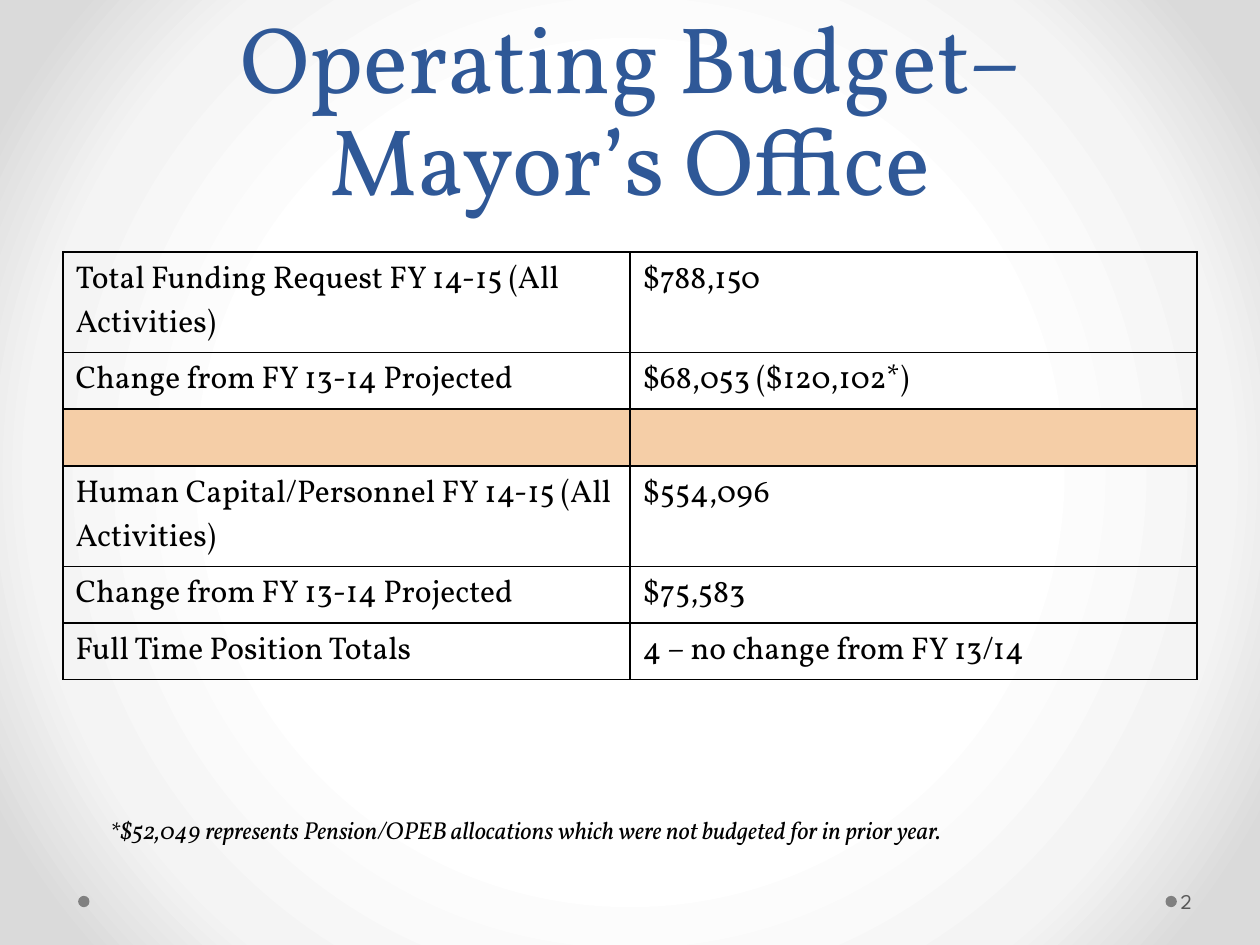
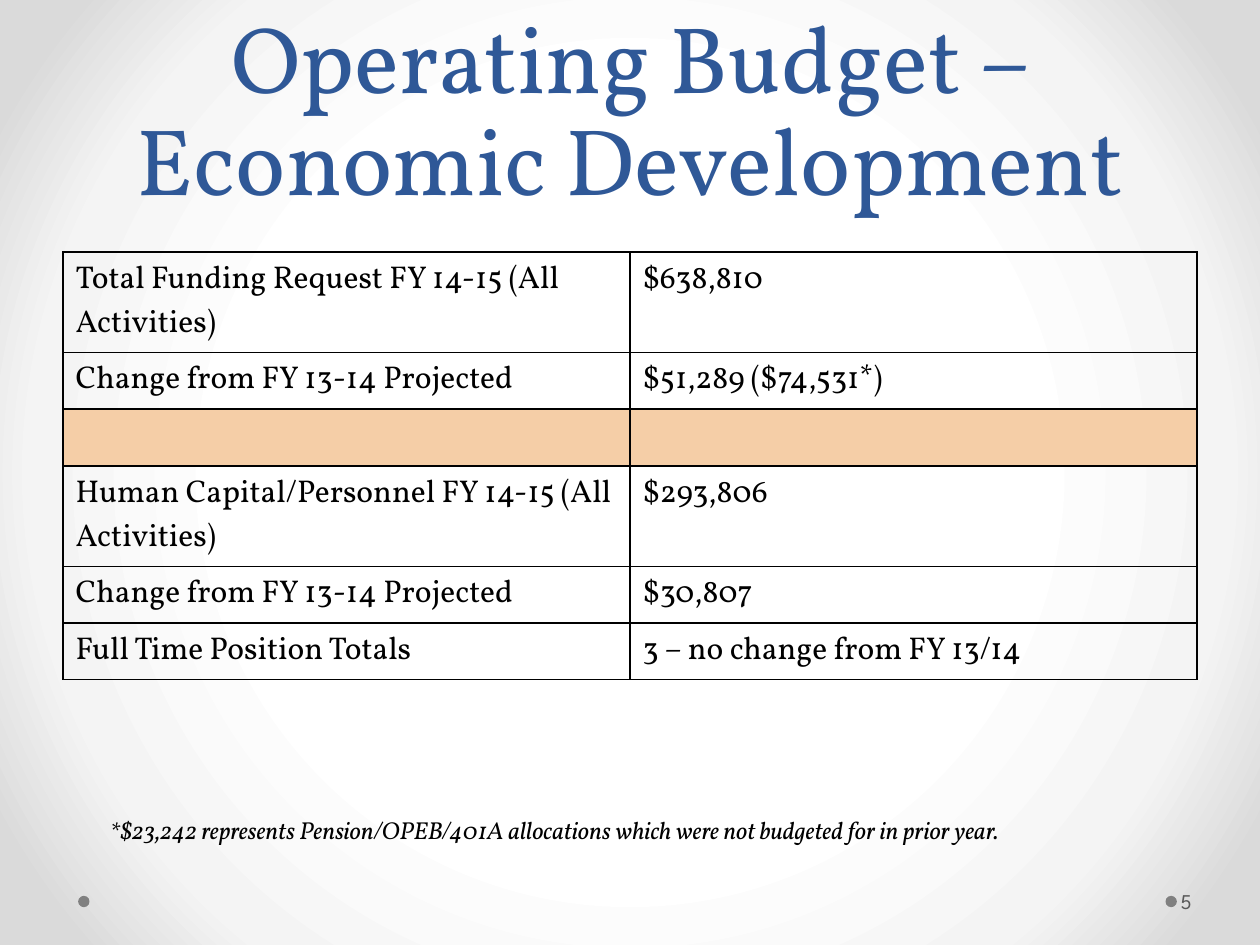
from pptx import Presentation
from pptx.dml.color import RGBColor
from pptx.enum import shapes, text
from pptx.oxml import parse_xml
from pptx.oxml.ns import nsdecls, qn
from pptx.util import Inches, Pt

# Shared look
TITLE_BLUE = RGBColor(0x2F, 0x58, 0x97)
BLACK = RGBColor(0x00, 0x00, 0x00)
DOT_GREY = RGBColor(0x80, 0x80, 0x80)
NUMBER_GREY = RGBColor(0x59, 0x59, 0x59)
DIVIDER_PEACH = RGBColor(0xF5, 0xCE, 0xA7)
BACKDROP_STOPS = [
    (50, RGBColor(0xFF, 0xFF, 0xFF)),
    (76, RGBColor(0xF4, 0xF4, 0xF4)),
    (92, RGBColor(0xDA, 0xDA, 0xDA)),
]
SERIF, SANS = "Vollkorn", "League Spartan"
TITLE_FONT = {"name": SERIF, "size": Pt(54), "color": TITLE_BLUE}
CELL_FONT = {"name": SERIF, "size": Pt(18), "color": BLACK}
NOTE_FONT = {"name": SERIF, "size": Pt(14), "color": BLACK, "italic": True}
NUMBER_FONT = {"name": SANS, "size": Pt(12), "color": NUMBER_GREY}

# Shared grid, in inches
WIDTH, HEIGHT = 10, 7.5
MARGIN = WIDTH / 20
CONTENT_WIDTH = WIDTH - 2 * MARGIN
LINE_ROW, WRAPPED_ROW = 0.45, 0.79
DOT_SIZE, DOT_TOP, DOT_LEFTS = 0.09, 7.11, (9.25, 0.62)

LABELS = [
    "Total Funding Request FY 14-15 (All Activities)",
    "Change from FY 13-14 Projected",
    "",
    "Human Capital/Personnel FY 14-15 (All Activities)",
    "Change from FY 13-14 Projected",
    "Full Time Position Totals",
]
BUDGETS = [
    {
        "title": "Operating Budget– Mayor’s Office",
        "amounts": ["$788,150", "$68,053 ($120,102*)", "", "$554,096",
                    "$75,583", "4 – no change from FY 13/14"],
        "note": "*$52,049 represents Pension/OPEB allocations "
                "which were not budgeted for in prior year.",
        "note_width": 7.28,
        "number": "2",
    },
    {
        "title": "Operating Budget –Economic Development",
        "amounts": ["$638,810", "$51,289 ($74,531*)", "", "$293,806",
                    "$30,807", "3 – no change from FY 13/14"],
        "note": "*$23,242 represents Pension/OPEB/401A allocations "
                "which were not budgeted for in prior year.",
        "note_width": 7.76,
        "number": "5",
    },
]


def inches(*lengths):
    return [Inches(length) for length in lengths]


def write(frame, words, font):
    """Put one formatted span into the first paragraph of a text frame."""
    para = frame.paragraphs[0]
    span = para.add_run()
    span.text = words
    for name, value in font.items():
        if name == "color":
            span.font.color.rgb = value
        else:
            setattr(span.font, name, value)
    return para


def set_backdrop(master):
    """Give the master a round gradient, white in the middle."""
    master.background.fill.gradient()
    gradient = master.element.find(".//" + qn("a:gradFill"))
    stops = "".join(
        f'<a:gs pos="{share * 1000}"><a:srgbClr val="{color}"/></a:gs>'
        for share, color in BACKDROP_STOPS)
    fresh = parse_xml(
        f'<a:gradFill {nsdecls("a")} rotWithShape="1"><a:gsLst>{stops}</a:gsLst>'
        '<a:path path="circle"><a:fillToRect l="50000" t="50000" r="50000" b="50000"/>'
        '</a:path></a:gradFill>')
    gradient.getparent().replace(gradient, fresh)


def add_dots(page):
    for left in DOT_LEFTS:
        dot = page.shapes.add_shape(
            shapes.MSO_SHAPE.OVAL, *inches(left, DOT_TOP, DOT_SIZE, DOT_SIZE))
        dot.shadow.inherit = False
        dot.fill.solid()
        dot.fill.fore_color.rgb = DOT_GREY
        dot.line.fill.background()


def set_title(page, words):
    title = page.shapes.title
    title.left, title.top, title.width, title.height = inches(
        MARGIN, 0, CONTENT_WIDTH, 1.75)
    frame = title.text_frame
    frame.auto_size = text.MSO_AUTO_SIZE.NONE
    frame.vertical_anchor = text.MSO_ANCHOR.BOTTOM
    para = write(frame, words, TITLE_FONT)
    para.alignment = text.PP_ALIGN.CENTER
    para.line_spacing = Pt(58)


def add_borders(cell):
    """Draw a thin black line on all four sides; lines precede the fill."""
    properties = cell._tc.get_or_add_tcPr()
    for index, side in enumerate(("lnL", "lnR", "lnT", "lnB")):
        properties.insert(index, parse_xml(
            f'<a:{side} {nsdecls("a")} w="{Pt(1)}"><a:solidFill>'
            f'<a:srgbClr val="{BLACK}"/></a:solidFill></a:{side}>'))


def add_budget_table(page, amounts):
    heights = [WRAPPED_ROW if "(All" in label else LINE_ROW for label in LABELS]
    table = page.shapes.add_table(
        len(LABELS), 2, *inches(MARGIN, 2, CONTENT_WIDTH, sum(heights))).table
    table.first_row = table.horz_banding = False
    for row, height, *entries in zip(table.rows, heights, LABELS, amounts):
        row.height = Inches(height)
        for cell, words in zip(row.cells, entries):
            if words:
                cell.fill.background()
                write(cell.text_frame, words, CELL_FONT)
            else:
                cell.fill.solid()
                cell.fill.fore_color.rgb = DIVIDER_PEACH
            add_borders(cell)


def add_page_number(page, number):
    frame = page.shapes.add_textbox(*inches(9.34, 6.95, 0.61, 0.4)).text_frame
    insets = {"margin_left": 0.03, "margin_right": 0.05,
              "margin_top": 0.05, "margin_bottom": 0.05}
    for name, value in insets.items():
        setattr(frame, name, Inches(value))
    frame.word_wrap = True
    frame.vertical_anchor = text.MSO_ANCHOR.MIDDLE
    write(frame, number, NUMBER_FONT)


def add_footnote(page, words, width):
    frame = page.shapes.add_textbox(*inches(0.77, 6.42, width, 0.34)).text_frame
    frame.word_wrap = False
    frame.auto_size = text.MSO_AUTO_SIZE.SHAPE_TO_FIT_TEXT
    write(frame, words, NOTE_FONT)


def main():
    deck = Presentation()
    deck.slide_width, deck.slide_height = inches(WIDTH, HEIGHT)
    set_backdrop(deck.slide_master)
    title_only = deck.slide_layouts.get_by_name("Title Only")
    for budget in BUDGETS:
        page = deck.slides.add_slide(title_only)
        add_dots(page)
        set_title(page, budget["title"])
        add_budget_table(page, budget["amounts"])
        add_page_number(page, budget["number"])
        add_footnote(page, budget["note"], budget["note_width"])
    deck.save("out.pptx")


if __name__ == "__main__":
    main()
